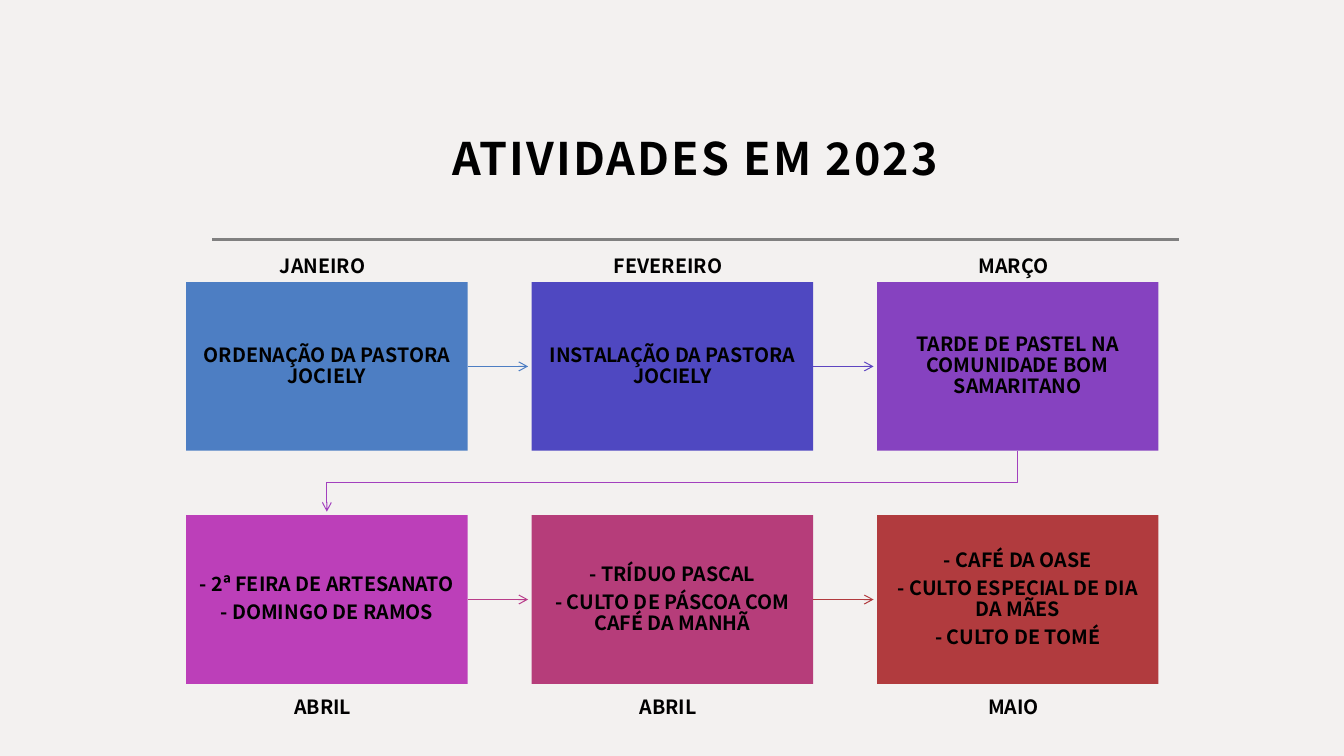
from dataclasses import dataclass

from lxml.etree import SubElement
from pptx import Presentation
from pptx.dml.color import RGBColor
from pptx.enum.shapes import MSO_CONNECTOR as Connector, MSO_SHAPE as Preset
from pptx.enum.text import MSO_ANCHOR as Anchor, MSO_AUTO_SIZE as AutoSize, PP_ALIGN as Align
from pptx.oxml.ns import qn
from pptx.util import Pt


@dataclass(frozen=True)
class Theme:
    font: str = "Noto Sans CJK JP"
    background: str = "F3F1F0"
    ink: str = "000000"
    rule: str = "808080"
    title_size: int = 32
    text_size: int = 14
    rule_width: float = 2
    arrow_width: float = 0.75


THEME = Theme()

ACTIVITIES = [
    [
        ("JANEIRO", "4D7EC3", "4D7EC3", ["ORDENAÇÃO DA PASTORA JOCIELY"]),
        ("FEVEREIRO", "4F48C1", "5D46C1", ["INSTALAÇÃO DA PASTORA JOCIELY"]),
        ("MARÇO", "8642C0", "A240BE", ["TARDE DE PASTEL NA COMUNIDADE BOM SAMARITANO"]),
    ],
    [
        ("ABRIL", "BC3FB9", "B83D8A", ["- 2ª FEIRA DE ARTESANATO", "- DOMINGO DE RAMOS"]),
        ("ABRIL", "B63D7A", "B13B3E", ["- TRÍDUO PASCAL", "- CULTO DE PÁSCOA COM CAFÉ DA MANHÃ"]),
        ("MAIO", "B13B3E", None, ["- CAFÉ DA OASE", "- CULTO ESPECIAL DE DIA DA MÃES", "- CULTO DE TOMÉ"]),
    ],
]


def color(code):
    return RGBColor.from_string(code)


def write(frame, lines, size, anchor, spacing=1.0, after=0):
    frame.word_wrap = True
    frame.auto_size = AutoSize.NONE
    frame.vertical_anchor = anchor
    for index, line in enumerate(lines):
        paragraph = frame.add_paragraph() if index else frame.paragraphs[0]
        paragraph.text = line
        paragraph.alignment = Align.CENTER
        paragraph.line_spacing = spacing
        paragraph.space_before = Pt(0)
        paragraph.space_after = Pt(after)
        paragraph.font.name = THEME.font
        paragraph.font.size = Pt(size)
        paragraph.font.bold = True
        paragraph.font.color.rgb = color(THEME.ink)


def set_insets(frame, inset):
    frame.margin_left = frame.margin_right = Pt(inset)
    frame.margin_top = frame.margin_bottom = Pt(inset)


def draw_line(slide, start, end, code, width):
    line = slide.shapes.add_connector(Connector.STRAIGHT, *map(Pt, start + end))
    line.line.color.rgb = color(code)
    line.line.width = Pt(width)
    SubElement(line._element.spPr, qn("a:effectLst"))
    return line


def add_arrowhead(shape):
    SubElement(shape.line._get_or_add_ln(), qn("a:tailEnd"), type="arrow")


def add_heading(slide, left, top, width, height):
    title = slide.shapes.title
    title.left, title.top, title.width, title.height = map(Pt, (left, top, width, height))
    set_insets(title.text_frame, 8)
    write(title.text_frame, ["ATIVIDADES EM 2023"], THEME.title_size, Anchor.BOTTOM, spacing=1.3)
    title.text_frame.paragraphs[0].runs[0]._r.get_or_add_rPr().set("spc", "150")
    rule_top = top + height + 31
    draw_line(slide, (left, rule_top), (left + width, rule_top), THEME.rule, THEME.rule_width)


def add_activity(slide, left, top, width, height, fill, lines):
    card = slide.shapes.add_shape(Preset.RECTANGLE, *map(Pt, (left, top, width, height)))
    card.shadow.inherit = False
    card.fill.solid()
    card.fill.fore_color.rgb = color(fill)
    card.line.fill.background()
    set_insets(card.text_frame, 8)
    write(card.text_frame, lines, THEME.text_size, Anchor.MIDDLE, spacing=0.9, after=5)
    return card


def add_month(slide, left, top, width, month):
    label = slide.shapes.add_textbox(*map(Pt, (left, top, width, 24.5)))
    write(label.text_frame, [month], THEME.text_size, Anchor.TOP)


def add_return_arrow(slide, start, end, bend, code):
    (start_x, start_y), (end_x, end_y) = start, end
    turns = [(start_x, bend), (end_x, bend), (end_x, end_y)]
    builder = slide.shapes.build_freeform(Pt(start_x), Pt(start_y))
    builder.add_line_segments([(Pt(x), Pt(y)) for x, y in turns], close=False)
    arrow = builder.convert_to_shape()
    arrow.shadow.inherit = False
    arrow.fill.background()
    arrow.line.color.rgb = color(code)
    arrow.line.width = Pt(THEME.arrow_width)
    add_arrowhead(arrow)


def add_timeline(slide, left, top, width, height):
    card_width, card_height, clearance = 201, 120.5, 2.5
    column_step = (width - card_width) / 2
    row_step = height - card_height
    month_tops = (top - 23.5, top + height + 4.5)
    for row, activities in enumerate(ACTIVITIES):
        card_top = top + row * row_step
        middle = card_top + card_height / 2
        for column, (month, fill, arrow_color, lines) in enumerate(activities):
            card_left = left + column * column_step
            card_right = card_left + card_width
            card = add_activity(slide, card_left, card_top, card_width, card_height, fill, lines)
            add_month(slide, card_left - 3, month_tops[row], card_width, month)
            if column < 2:
                arrow_end = card_left + column_step - clearance
                arrow = draw_line(slide, (card_right, middle), (arrow_end, middle),
                                  arrow_color, THEME.arrow_width)
                arrow.begin_connect(card, 3)
                add_arrowhead(arrow)
            elif arrow_color:
                bottom = card_top + card_height
                add_return_arrow(slide, (card_left + card_width / 2, bottom),
                                 (left + card_width / 2, top + row_step - clearance),
                                 bottom + 23, arrow_color)


def main():
    deck = Presentation()
    deck.slide_width, deck.slide_height = Pt(960), Pt(540)
    slide = deck.slides.add_slide(deck.slide_layouts[5])
    slide.background.fill.solid()
    slide.background.fill.fore_color.rgb = color(THEME.background)
    add_heading(slide, 151.5, 34.5, 690.5, 105.5)
    add_timeline(slide, 133, 201.5, 694.5, 287)
    deck.save("out.pptx")


if __name__ == "__main__":
    main()
